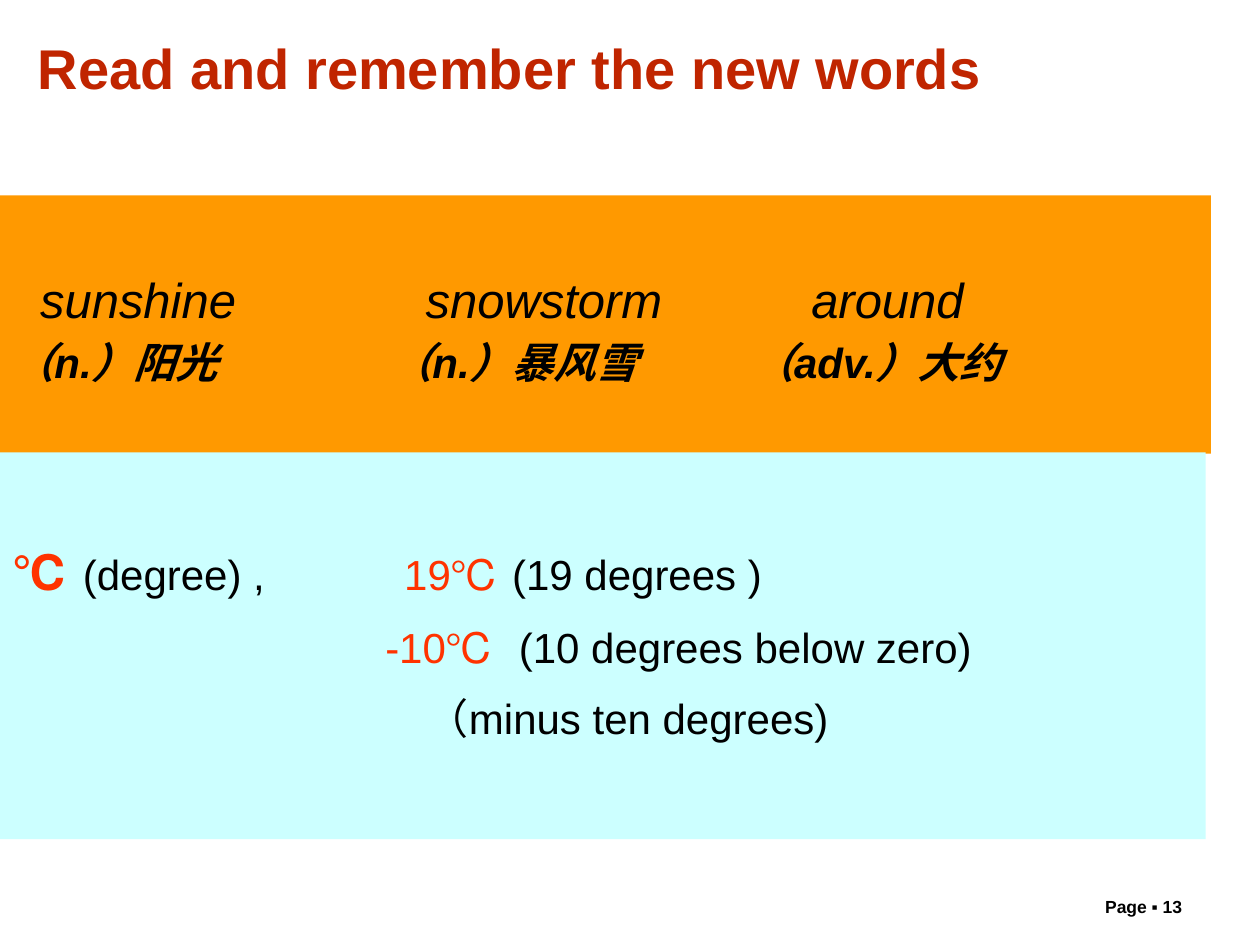
from lxml import etree
from pptx import Presentation
from pptx.dml.color import RGBColor
from pptx.enum.shapes import MSO_SHAPE
from pptx.enum.text import MSO_ANCHOR, MSO_AUTO_SIZE, PP_ALIGN
from pptx.oxml.ns import qn
from pptx.util import Inches, Pt

RECTANGLE = MSO_SHAPE.RECTANGLE
TOP, MIDDLE = MSO_ANCHOR.TOP, MSO_ANCHOR.MIDDLE
LEFT, RIGHT = PP_ALIGN.LEFT, PP_ALIGN.RIGHT
TITLE_ONLY = 5

COLORS = {"title": "C02500", "orange": "FF9900", "aqua": "CCFFFF",
          "text": "000000", "degree": "FF3300"}
FONT = "Arial"

TITLE = "Read and remember the new words"
PAGE = "Page ▪ 13"
WORDS = ["sunshine", "snowstorm", "around"]
MEANINGS = ["（n.）阳光", "（n.）暴风雪", "（adv.）大约"]

# Each line: left margin and tab stops in inches,
# then runs of (text, size, color, bold, italic)
WORD_LINES = [
    (0, [0.22, 3.28, 6.34],
     [("\t" + "\t".join(WORDS), 28, "text", False, True)]),
    (0, [3.0, 5.87],
     [("\t".join(MEANINGS), 24, "text", True, True)]),
]
DEGREE_LINES = [
    (0, [3.11],
     [("℃ ", 28, "degree", True, False),
      ("(degree) ,\t", 24, "text", False, False),
      ("19℃", 24, "degree", False, False),
      (" (19 degrees )", 24, "text", False, False)]),
    (2.96, [],
     [("-10℃", 24, "degree", False, False),
      ("  (10 degrees below zero)", 24, "text", False, False)]),
    (3.29, [],
     [("（minus ten degrees)", 24, "text", False, False)]),
]

# Panels: top, width, height, fill, lines, top inset, gap in points
PANELS = [
    (1.55, 9.61, 2.05, "orange", WORD_LINES, 0.59, 4.8),
    (3.59, 9.57, 3.07, "aqua", DEGREE_LINES, 0.71, 12),
]


def color(name):
    return RGBColor.from_string(COLORS[name])


def set_margin_and_tabs(paragraph, margin, stops):
    properties = paragraph._p.get_or_add_pPr()
    if margin:
        properties.set("marL", str(Inches(margin)))
    if stops:
        tabs = etree.SubElement(properties, qn("a:tabLst"))
        for stop in stops:
            etree.SubElement(tabs, qn("a:tab"), pos=str(Inches(stop)), algn="l")


def add_run(paragraph, text, size, color_name, bold, italic):
    run = paragraph.add_run()
    run.text = text
    font = run.font
    font.name, font.size = FONT, Pt(size)
    font.bold, font.italic = bold, italic
    font.color.rgb = color(color_name)


def add_panel(slide, top, width, height, fill, lines, top_inset, gap):
    panel = slide.shapes.add_shape(
        RECTANGLE, Inches(0), Inches(top), Inches(width), Inches(height))
    panel.shadow.inherit = False
    panel.fill.solid()
    panel.fill.fore_color.rgb = color(fill)
    panel.line.fill.background()
    frame = panel.text_frame
    frame.word_wrap = True
    frame.vertical_anchor = TOP
    frame.margin_top = Inches(top_inset)
    for index, (margin, stops, runs) in enumerate(lines):
        paragraph = frame.add_paragraph() if index else frame.paragraphs[0]
        paragraph.alignment = LEFT
        paragraph.space_before = Pt(gap if index else 0)
        set_margin_and_tabs(paragraph, margin, stops)
        for run in runs:
            add_run(paragraph, *run)


def main():
    prs = Presentation()
    prs.slide_width, prs.slide_height = Inches(10), Inches(7.5)
    slide = prs.slides.add_slide(prs.slide_layouts[TITLE_ONLY])

    title = slide.shapes.title
    title.left, title.top = Inches(0.2), Inches(0.21)
    title.width, title.height = Inches(8.98), Inches(0.65)
    title.text_frame.vertical_anchor = MIDDLE
    title.text_frame.auto_size = MSO_AUTO_SIZE.NONE
    heading = title.text_frame.paragraphs[0]
    heading.alignment = LEFT
    add_run(heading, TITLE, 32, "title", True, False)

    for panel in PANELS:
        add_panel(slide, *panel)

    page = slide.shapes.add_textbox(
        Inches(7.91), Inches(7.06), Inches(1.57), Inches(0.22))
    page.text_frame.word_wrap = True
    footer = page.text_frame.paragraphs[0]
    footer.alignment = RIGHT
    add_run(footer, PAGE, 10, "text", True, False)

    prs.save("out.pptx")


if __name__ == "__main__":
    main()
